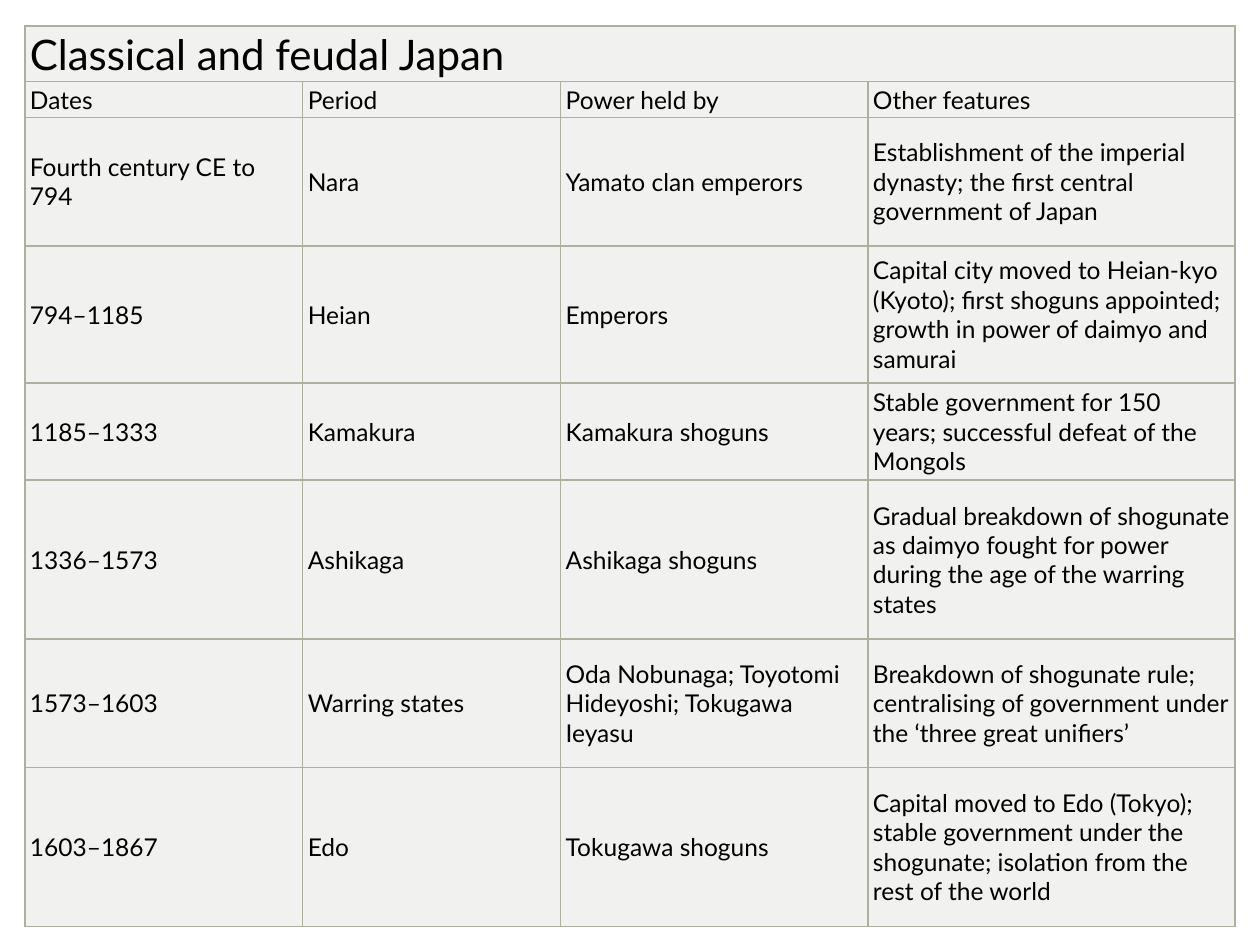
from pptx import Presentation
from pptx.dml.color import RGBColor
from pptx.enum.text import MSO_ANCHOR
from pptx.oxml import parse_xml
from pptx.oxml.ns import nsdecls
from pptx.util import Pt

MIDDLE = MSO_ANCHOR.MIDDLE
FONT = "Lato"
INK, FILL, BORDER = "000000", "F1F2F0", "ABB19F"

TITLE = "Classical and feudal Japan"
ROWS = [
    (TITLE, "", "", ""),
    ("Dates", "Period", "Power held by", "Other features"),
    ("Fourth century CE to 794", "Nara", "Yamato clan emperors",
     "Establishment of the imperial dynasty; the first central government of Japan"),
    ("794–1185", "Heian", "Emperors",
     "Capital city moved to Heian-kyo (Kyoto); first shoguns appointed; "
     "growth in power of daimyo and samurai"),
    ("1185–1333", "Kamakura", "Kamakura shoguns",
     "Stable government for 150 years; successful defeat of the Mongols"),
    ("1336–1573", "Ashikaga", "Ashikaga shoguns",
     "Gradual breakdown of shogunate as daimyo fought for power "
     "during the age of the warring states"),
    ("1573–1603", "Warring states",
     "Oda Nobunaga; Toyotomi Hideyoshi; Tokugawa Ieyasu",
     "Breakdown of shogunate rule; centralising of government "
     "under the ‘three great unifiers’"),
    ("1603–1867", "Edo", "Tokugawa shoguns",
     "Capital moved to Edo (Tokyo); stable government under the shogunate; "
     "isolation from the rest of the world"),
]
COL_WIDTHS = [158.8, 147.4, 175.6, 209.8]
ROW_HEIGHTS = [31.5, 20.6, 73.4, 78.4, 55.5, 90.8, 73.4, 90.8]
CELL_FORMAT = {
    "vertical_anchor": MIDDLE,
    "margin_left": Pt(2.9), "margin_right": Pt(2.9),
    "margin_top": Pt(1.4), "margin_bottom": Pt(1.4),
}


def color(value):
    return RGBColor.from_string(value)


def add_borders(cell):
    """Draw a 1 pt line on all four sides; lines must precede the fill."""
    tcPr = cell._tc.get_or_add_tcPr()
    for i, side in enumerate(("lnL", "lnR", "lnT", "lnB")):
        tcPr.insert(i, parse_xml(
            f'<a:{side} {nsdecls("a")} w="{Pt(1)}"><a:solidFill>'
            f'<a:srgbClr val="{BORDER}"/></a:solidFill></a:{side}>'))


prs = Presentation()
prs.slide_width, prs.slide_height = Pt(720), Pt(540)
s = prs.slides.add_slide(prs.slide_layouts[6])

# Table grid
table = s.shapes.add_table(
    len(ROWS), len(COL_WIDTHS), Pt(14.2), Pt(15),
    Pt(sum(COL_WIDTHS)), Pt(sum(ROW_HEIGHTS))).table
table.first_row = table.horz_banding = False
for col, width in zip(table.columns, COL_WIDTHS):
    col.width = Pt(width)
for row, height in zip(table.rows, ROW_HEIGHTS):
    row.height = Pt(height)

# Title spans every column
table.cell(0, 0).merge(table.cell(0, len(COL_WIDTHS) - 1))

# Cell text and formatting
for i, texts in enumerate(ROWS):
    for j, text in enumerate(texts):
        cell = table.cell(i, j)
        for name, value in CELL_FORMAT.items():
            setattr(cell, name, value)
        cell.fill.solid()
        cell.fill.fore_color.rgb = color(FILL)
        add_borders(cell)
        if text:
            r = cell.text_frame.paragraphs[0].add_run()
            r.text = text
            r.font.name = FONT
            r.font.size = Pt(24 if text == TITLE else 14)
            r.font.color.rgb = color(INK)

prs.save("out.pptx")
